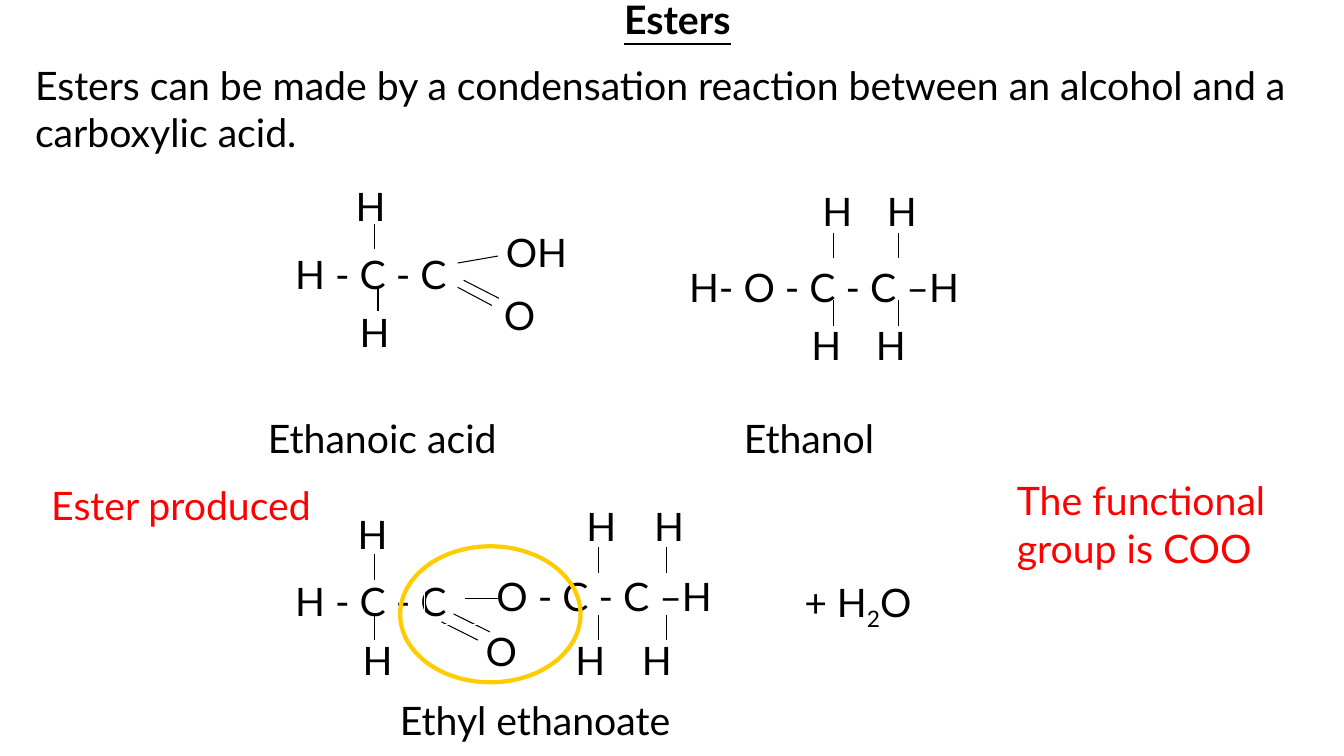
from lxml import etree
from pptx import Presentation
from pptx.dml.color import RGBColor
from pptx.enum.shapes import MSO_CONNECTOR, MSO_SHAPE
from pptx.enum.text import MSO_ANCHOR, PP_ALIGN
from pptx.oxml.ns import qn
from pptx.util import Pt

RECTANGLE, OVAL = MSO_SHAPE.RECTANGLE, MSO_SHAPE.OVAL
STRAIGHT = MSO_CONNECTOR.STRAIGHT
TOP, LEFT, CENTER = MSO_ANCHOR.TOP, PP_ALIGN.LEFT, PP_ALIGN.CENTER
BLACK = RGBColor(0x00, 0x00, 0x00)
WHITE = RGBColor(0xFF, 0xFF, 0xFF)
RED = RGBColor(0xFF, 0x00, 0x00)
GOLD = RGBColor(0xFF, 0xCC, 0x00)
FONT, SIZE = "Lato", 28
LINE_HEIGHT, TALL = 41, 108.7
INSET = 7.2
BOND = 18

TITLE = "Esters"
INTRO = ("Esters can be made by a condensation reaction between "
         "an alcohol and a carboxylic acid.")
INTRO_BOX = (18, -7.2, 931.7, 126)

# Atoms: text, left, top, width, height, left inset
# Upright bonds: x, top; other bonds: x1, y1, x2, y2
ETHANOIC_ACID = {
    "atoms": [
        ("H - C - C", 203.8, 175, 184.3, LINE_HEIGHT, INSET),
        ("H", 247, 126.7, 46, LINE_HEIGHT, INSET),
        ("H", 249.8, 216.7, 46, LINE_HEIGHT, INSET),
        ("OH", 354.2, 159.8, 87.1, LINE_HEIGHT, INSET),
        ("O", 352.8, 204.5, 46, TALL, INSET),
    ],
    "upright": [(270, 204.5), (267.8, 159.8)],
    "other": [(355.7, 182.9, 326.9, 187.9),
              (331.2, 200.2, 356.4, 213.1),
              (326.9, 205.2, 351.4, 218.2)],
}
ETHANOL = {
    "atoms": [
        ("H", 572.4, 226.1, 46, TALL, INSET),
        ("H- O - C - C –H", 472.3, 184.3, 302.4, LINE_HEIGHT, 19.9),
        ("H", 626.4, 130.3, 46, LINE_HEIGHT, INSET),
        ("H", 618.5, 226.1, 46, LINE_HEIGHT, INSET),
        ("H", 580.3, 130.3, 46, LINE_HEIGHT, INSET),
    ],
    "upright": [(x, y) for y in (214.6, 166.3) for x in (595.4, 641.5)],
    "other": [],
}
ESTER_ACID_PART = {
    "atoms": [
        ("H - C - C", 203.8, 409, 192.2, LINE_HEIGHT, INSET),
        ("H", 248.4, 360.7, 48.2, LINE_HEIGHT, INSET),
        ("H", 252, 450.7, 48.2, LINE_HEIGHT, INSET),
        ("O", 339.8, 444.2, 48.2, TALL, INSET),
    ],
    "upright": [(267.8, 439.2), (267.8, 396)],
    "other": [(324, 438.5, 349.9, 451.4), (315.4, 444.2, 341.3, 457.2)],
}
ESTER_ALCOHOL_PART = {
    "atoms": [
        ("H", 403.9, 450.7, 48.2, TALL, INSET),
        ("O - C - C –H", 303.1, 405.4, 315.4, LINE_HEIGHT, 51.5),
        ("H", 460.1, 355, 48.2, LINE_HEIGHT, INSET),
        ("H", 451.4, 450.7, 48.2, LINE_HEIGHT, INSET),
        ("H", 411.8, 355, 48.2, LINE_HEIGHT, INSET),
    ],
    "upright": [(x, y) for y in (439.2, 391) for x in (427.7, 475.9)],
    "other": [(331.9, 427.7, 355.7, 427.7)],
}
FRAGMENTS = [ETHANOIC_ACID, ETHANOL, ESTER_ACID_PART, ESTER_ALCOHOL_PART]

CAPTIONS = [
    ("Ethanoic acid", (184.3, 292.3, 230.4, LINE_HEIGHT), BLACK),
    ("Ethanol", (524.2, 292.3, 215.3, LINE_HEIGHT), BLACK),
    ("Ethyl ethanoate", (278.6, 493.9, 432, LINE_HEIGHT), BLACK),
    ("Ester produced", (29.5, 340.6, 209.5, LINE_HEIGHT), RED),
    ("The functional group is COO", (719.3, 337, 209.5, 74.9), RED),
]
WATER = ["+ H", "2", "O"]
WATER_BOX = (567.4, 409.7, 151.9, LINE_HEIGHT)
FUNCTIONAL_GROUP_RING = (285.8, 390.2, 128.9, 97.2)


def points(values):
    return [Pt(value) for value in values]


def style_text(shape, color, left_inset=INSET):
    frame = shape.text_frame
    frame.word_wrap = True
    frame.vertical_anchor = TOP
    frame.margin_left = Pt(left_inset)
    for paragraph in frame.paragraphs:
        paragraph.alignment = LEFT
        for run in paragraph.runs:
            run.font.name = FONT
            run.font.size = Pt(SIZE)
            run.font.color.rgb = color


def add_label(shapes, text, box, color):
    label = shapes.add_textbox(*points(box))
    label.text_frame.text = text
    style_text(label, color)
    return label


def add_outline(shapes, kind, box, color, width):
    shape = shapes.add_shape(kind, *points(box))
    shape.shadow.inherit = False
    shape.fill.background()
    shape.line.color.rgb = color
    shape.line.width = Pt(width)
    return shape


def add_bond(shapes, ends):
    bond = shapes.add_connector(STRAIGHT, *points(ends))
    bond.line.color.rgb = BLACK
    bond.line.width = Pt(0.75)
    etree.SubElement(bond._element.spPr, qn("a:effectLst"))


def add_fragment(slide, fragment):
    """Draw one part of a molecule as a group, bonds above atoms."""
    shapes = slide.shapes.add_group_shape().shapes
    for text, left, top, width, height, inset in fragment["atoms"]:
        atom = add_outline(shapes, RECTANGLE, (left, top, width, height), WHITE, 0.75)
        atom.text_frame.text = text
        style_text(atom, BLACK, inset)
    upright = [(x, top, x, top + BOND) for x, top in fragment["upright"]]
    for ends in upright + fragment["other"]:
        add_bond(shapes, ends)


def main():
    presentation = Presentation()
    presentation.slide_width, presentation.slide_height = Pt(960), Pt(540)
    slide = presentation.slides.add_slide(presentation.slide_layouts[6])

    intro = add_label(slide.shapes, f"{TITLE}\n{INTRO}", INTRO_BOX, BLACK)
    title, body = intro.text_frame.paragraphs
    title.alignment = CENTER
    title.runs[0].font.bold = True
    title.runs[0].font.underline = True
    body.space_before = Pt(SIZE / 2)

    for fragment in FRAGMENTS:
        add_fragment(slide, fragment)
    for text, box, color in CAPTIONS:
        add_label(slide.shapes, text, box, color)

    water = slide.shapes.add_textbox(*points(WATER_BOX))
    formula = water.text_frame.paragraphs[0]
    for text in WATER:
        formula.add_run().text = text
    style_text(water, BLACK)
    formula.runs[1].font._element.set("baseline", "-25000")

    add_outline(slide.shapes, OVAL, FUNCTIONAL_GROUP_RING, GOLD, 3)
    presentation.save("out.pptx")


if __name__ == "__main__":
    main()
